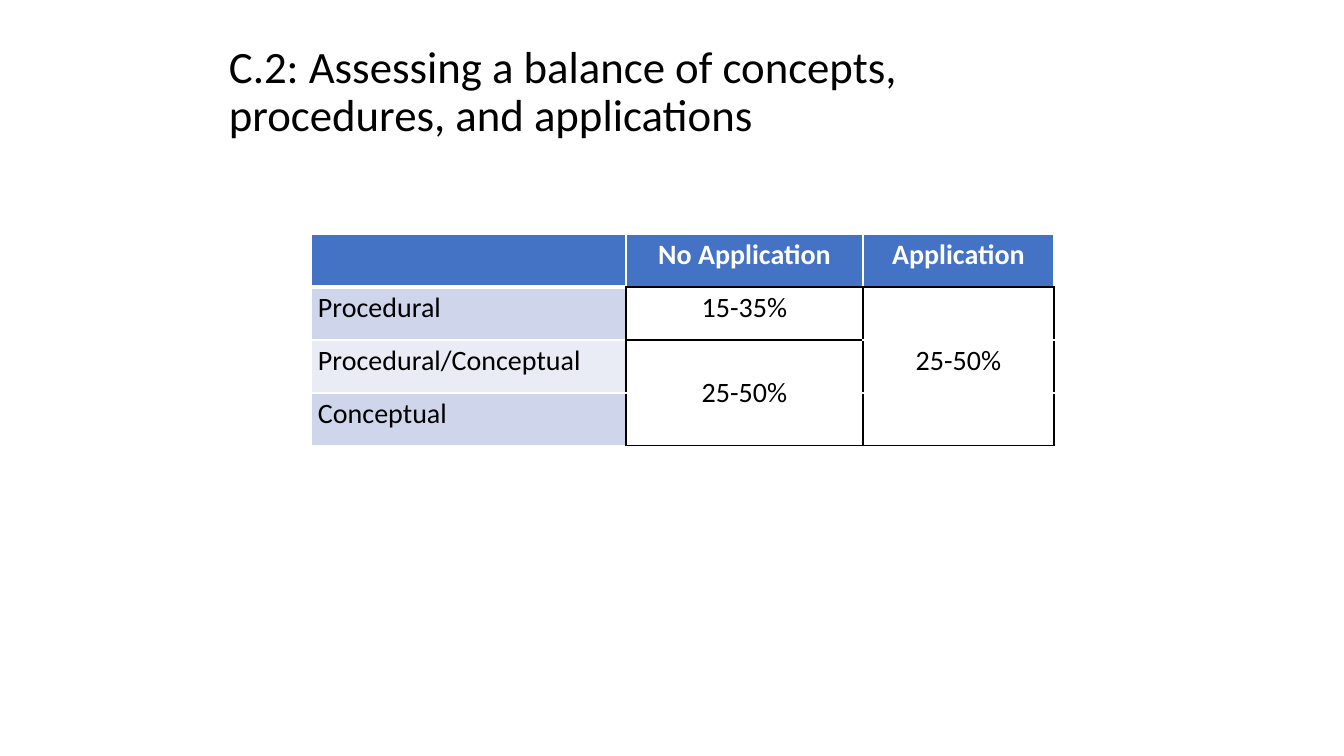
import pptx
import pptx.dml.color
import pptx.enum.text
import pptx.oxml
import pptx.oxml.ns
import pptx.util

EMU_PER_PX = 914400 / 100.8
FONT = "Calibri"
COLORS = {
    "black": "000000",
    "white": "FFFFFF",
    "header": "4472C4",
    "band_dark": "CFD5EA",
    "band_light": "E9EBF5",
}
WHITE_LINES = {side: ("white", 1) for side in "LRTB"}
BLACK_LINES = {side: ("black", 1) for side in "LRTB"}
HEADER_LINES = {**WHITE_LINES, "B": ("black", 1)}
COLUMN_WIDTHS = (315, 237, 191)
ROW_HEIGHT = 53
ROWS = (
    ("", "No Application", "Application"),
    ("Procedural", "15-35%", ""),
    ("Procedural/Conceptual", "25-50%", "25-50%"),
    ("Conceptual", "", ""),
)
FILLS = (
    ("header", "header", "header"),
    ("band_dark", "white", "white"),
    ("band_light", "white", "white"),
    ("band_dark", "white", "white"),
)
BORDERS = (
    ({**WHITE_LINES, "B": ("white", 3)}, HEADER_LINES, HEADER_LINES),
    (
        {**WHITE_LINES, "T": ("white", 3), "R": ("black", 1)},
        BLACK_LINES,
        {**BLACK_LINES, "B": ("white", 1)},
    ),
    (
        {**WHITE_LINES, "R": ("black", 1)},
        BLACK_LINES,
        {**BLACK_LINES, "T": ("white", 1), "B": ("white", 1)},
    ),
    (
        {**WHITE_LINES, "R": ("black", 1)},
        BLACK_LINES,
        {**BLACK_LINES, "T": ("white", 1)},
    ),
)


def px(length):
    return pptx.util.Emu(round(length * EMU_PER_PX))


def rgb(color):
    return pptx.dml.color.RGBColor.from_string(COLORS[color])


def add_run(paragraph, text, size, color="black", bold=False):
    run = paragraph.add_run()
    run.text = text
    run.font.name = FONT
    run.font.size = pptx.util.Pt(size)
    run.font.bold = bold
    run.font.color.rgb = rgb(color)


def add_title(slide, text):
    title = slide.shapes.add_textbox(px(219), px(30), px(907), px(126))
    frame = title.text_frame
    frame.word_wrap = True
    frame.vertical_anchor = pptx.enum.text.MSO_ANCHOR.MIDDLE
    paragraph = frame.paragraphs[0]
    paragraph.line_spacing = 0.9
    add_run(paragraph, text, 32)


def set_borders(cell, borders):
    properties = cell._tc.get_or_add_tcPr()
    for position, side in enumerate("LRTB"):
        color, width = borders[side]
        line = pptx.oxml.parse_xml(
            f'<a:ln{side} {pptx.oxml.ns.nsdecls("a")} w="{pptx.util.Pt(width)}">'
            f'<a:solidFill><a:srgbClr val="{COLORS[color]}"/></a:solidFill>'
            f"</a:ln{side}>"
        )
        properties.insert(position, line)


def fill_cell(cell, text, fill, borders, centered, header):
    cell.fill.solid()
    cell.fill.fore_color.rgb = rgb(fill)
    cell.margin_left = cell.margin_right = px(7)
    cell.margin_top = cell.margin_bottom = px(4)
    set_borders(cell, borders)
    if text:
        paragraph = cell.text_frame.paragraphs[0]
        if centered:
            paragraph.alignment = pptx.enum.text.PP_ALIGN.CENTER
        add_run(paragraph, text, 20, "white" if header else "black", header)


def add_balance_table(slide):
    table = slide.shapes.add_table(
        len(ROWS), len(COLUMN_WIDTHS), px(311), px(234),
        px(sum(COLUMN_WIDTHS)), px(ROW_HEIGHT * len(ROWS)),
    ).table
    for column, width in zip(table.columns, COLUMN_WIDTHS):
        column.width = px(width)
    for row_index, labels in enumerate(ROWS):
        table.rows[row_index].height = px(ROW_HEIGHT)
        for column_index, label in enumerate(labels):
            fill_cell(
                table.cell(row_index, column_index),
                label,
                FILLS[row_index][column_index],
                BORDERS[row_index][column_index],
                centered=column_index > 0,
                header=row_index == 0,
            )
    conceptual_share = table.cell(2, 1)
    conceptual_share.merge(table.cell(3, 1))
    conceptual_share.vertical_anchor = pptx.enum.text.MSO_ANCHOR.MIDDLE


def main():
    deck = pptx.Presentation()
    deck.slide_width = px(1344)
    deck.slide_height = px(756)
    slide = deck.slides.add_slide(deck.slide_layouts[6])
    add_balance_table(slide)
    add_title(
        slide,
        "C.2: Assessing a balance of concepts, procedures, and applications",
    )
    deck.save("out.pptx")


if __name__ == "__main__":
    main()
